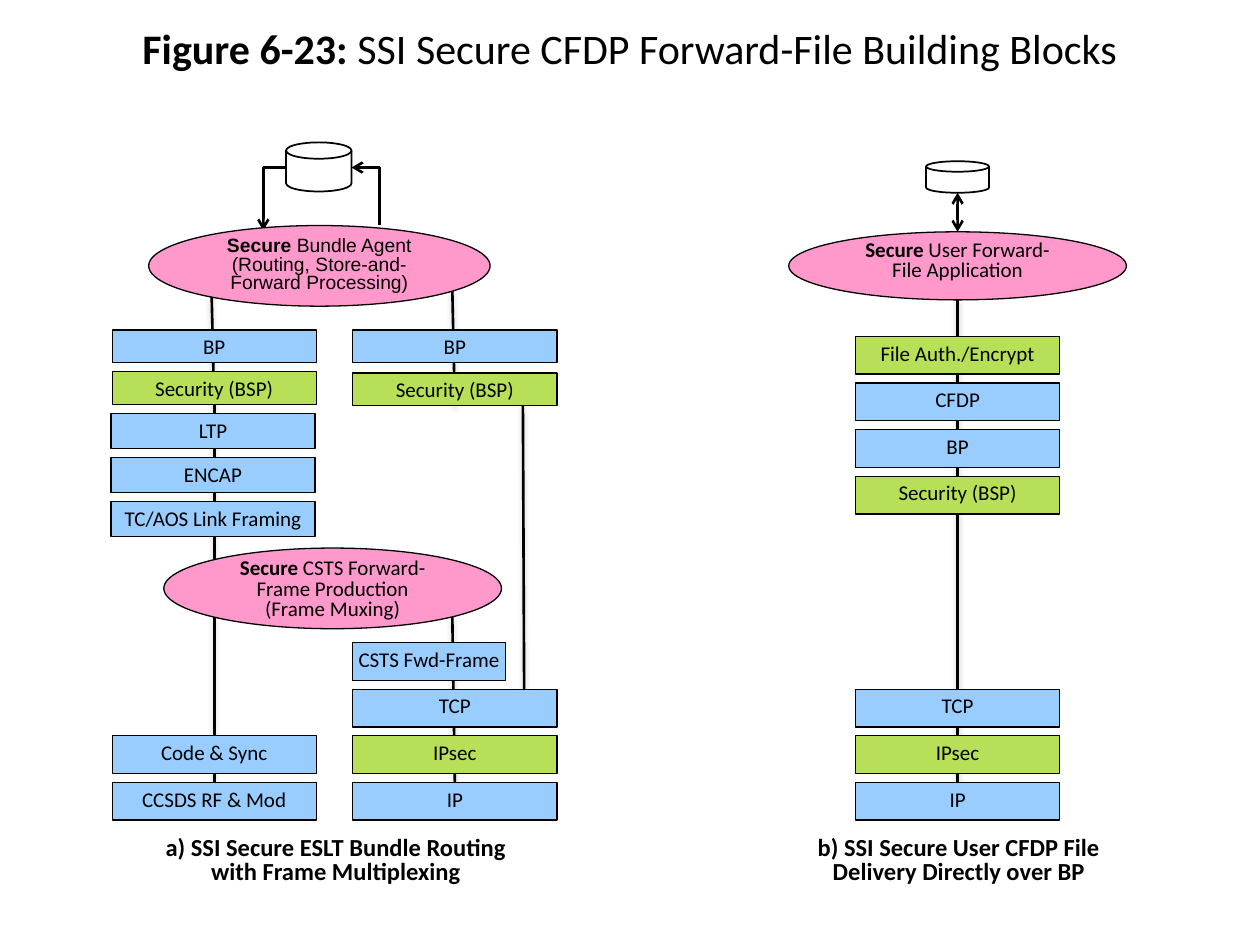
import pptx
import pptx.dml.color
import pptx.enum.shapes
import pptx.enum.text
import pptx.oxml
import pptx.oxml.ns
import pptx.util
from dataclasses import dataclass

Inches = pptx.util.Inches
Kind = pptx.enum.shapes.MSO_SHAPE
Wire = pptx.enum.shapes.MSO_CONNECTOR
Anchor = pptx.enum.text.MSO_ANCHOR
Align = pptx.enum.text.PP_ALIGN


@dataclass(frozen=True)
class Theme:
    black: str = "000000"
    white: str = "FFFFFF"
    blue: str = "99CCFF"
    green: str = "B7E058"
    pink: str = "FF99CC"
    shade: str = "808080"
    face: str = "Calibri"
    title: int = 24
    label: int = 14
    body: int = 12
    edge: float = 0.75
    disk: float = 1
    wire: float = 1.5
    tight: float = 0.8


@dataclass(frozen=True)
class Stack:
    left: float
    top: float
    pitch: float
    tall: float
    names: tuple[str, ...]
    wide: float = 1.62


@dataclass(frozen=True)
class Oval:
    at: tuple[float, float, float, float]
    lines: tuple[str, ...]
    face: str = "Calibri"
    size: int = 12
    anchor: Anchor = Anchor.TOP


THEME = Theme()
SECURE = {"Security (BSP)", "IPsec", "File Auth./Encrypt"}

STACKS = {
    "link": Stack(0.89, 2.62, 0.33, 0.26, ("BP", "Security (BSP)")),
    "frame": Stack(0.88, 3.28, 0.35, 0.28, ("LTP", "ENCAP", "TC/AOS Link Framing")),
    "radio": Stack(0.89, 5.84, 0.37, 0.3, ("Code & Sync", "CCSDS RF & Mod")),
    "bundle": Stack(2.8, 2.62, 0.34, 0.26, ("BP", "Security (BSP)")),
    "csts": Stack(2.8, 5.1, 0.37, 0.3, ("CSTS Fwd-Frame",), 1.21),
    "net": Stack(2.8, 5.47, 0.37, 0.3, ("TCP", "IPsec", "IP")),
    "user": Stack(6.79, 2.67, 0.37, 0.3,
                  ("File Auth./Encrypt", "CFDP", "BP", "Security (BSP)")),
    "base": Stack(6.79, 5.47, 0.37, 0.3, ("TCP", "IPsec", "IP")),
}

AGENT = Oval((1.18, 1.79, 2.71, 0.64),
             (" Bundle Agent", "(Routing, Store-and-Forward Processing)"),
             "Arial", 11, Anchor.MIDDLE)
MUXER = Oval((1.3, 4.35, 2.68, 0.64),
             (" CSTS Forward-Frame Production", "(Frame Muxing)"))
USER = Oval((6.26, 1.84, 2.68, 0.54), (" User Forward-", "File Application"))


def tint(code: str) -> pptx.dml.color.RGBColor:
    return pptx.dml.color.RGBColor.from_string(code)


def style(para, size: int, face: str = THEME.face, space: float | None = None) -> None:
    para.alignment = Align.CENTER
    para.line_spacing = space
    para.font.size = pptx.util.Pt(size)
    para.font.name = face
    para.font.color.rgb = tint(THEME.black)


def pad(frame, side: float, end: float) -> None:
    frame.margin_left = frame.margin_right = Inches(side)
    frame.margin_top = frame.margin_bottom = Inches(end)


def draw_shape(slide, kind, at: tuple, fill: str, edge: float = THEME.edge):
    shape = slide.shapes.add_shape(kind, *map(Inches, at))
    shape.shadow.inherit = False
    shape.fill.solid()
    shape.fill.fore_color.rgb = tint(fill)
    shape.line.color.rgb = tint(THEME.black)
    shape.line.width = pptx.util.Pt(edge)
    return shape


def draw_stack(slide, stack: Stack) -> list:
    boxes = []
    for row, name in enumerate(stack.names):
        at = (stack.left, stack.top + row * stack.pitch, stack.wide, stack.tall)
        fill = THEME.green if name in SECURE else THEME.blue
        box = draw_shape(slide, Kind.RECTANGLE, at, fill)
        frame = box.text_frame
        frame.word_wrap = False
        frame.vertical_anchor = Anchor.TOP
        pad(frame, 0.04, 0.03)
        frame.text = name
        style(frame.paragraphs[0], THEME.body)
        boxes.append(box)
    return boxes


def draw_oval(slide, oval: Oval):
    shape = draw_shape(slide, Kind.OVAL, oval.at, THEME.pink)
    frame = shape.text_frame
    frame.word_wrap = True
    frame.vertical_anchor = oval.anchor
    pad(frame, 0, 0)
    for row, line in enumerate(oval.lines):
        para = frame.add_paragraph() if row else frame.paragraphs[0]
        if row == 0:
            lead = para.add_run()
            lead.text = "Secure"
            lead.font.bold = True
        para.add_run().text = line
        style(para, oval.size, oval.face, THEME.tight)
    return shape


def draw_wire(slide, start: tuple, end: tuple, heads: tuple[str, ...] = (),
              bent: bool = False, shade: bool = True):
    kind = Wire.ELBOW if bent else Wire.STRAIGHT
    wire = slide.shapes.add_connector(kind, *map(Inches, start + end))
    wire.line.color.rgb = tint(THEME.black)
    wire.line.width = pptx.util.Pt(THEME.wire)
    props = wire._element.spPr
    if bent:
        props.find(pptx.oxml.ns.qn("a:prstGeom")).set("prst", "bentConnector2")
    pen = wire.line._get_or_add_ln()
    space = pptx.oxml.ns.nsdecls("a")
    for head in heads:
        pen.append(pptx.oxml.parse_xml(f'<a:{head} {space} type="arrow"/>'))
    glow = (f'<a:outerShdw blurRad="39370" dist="20320" dir="5400000">'
            f'<a:srgbClr val="{THEME.shade}"><a:alpha val="38000"/></a:srgbClr>'
            f'</a:outerShdw>') if shade else ""
    props.append(pptx.oxml.parse_xml(f"<a:effectLst {space}>{glow}</a:effectLst>"))
    slide.shapes._spTree.insert(2, wire._element)
    return wire


def draw_label(slide, at: tuple, text: str) -> None:
    frame = slide.shapes.add_textbox(*map(Inches, at)).text_frame
    frame.word_wrap = False
    frame.text = text
    for para in frame.paragraphs:
        style(para, THEME.label, space=THEME.tight)
        para.font.bold = True


def draw_title(slide) -> None:
    frame = slide.shapes.add_textbox(*map(Inches, (0.5, -0.25, 9, 1.25))).text_frame
    frame.word_wrap = True
    frame.vertical_anchor = Anchor.MIDDLE
    para = frame.paragraphs[0]
    lead = para.add_run()
    lead.text = "Figure 6-23: "
    lead.font.bold = True
    para.add_run().text = "SSI Secure CFDP Forward-File Building Blocks"
    style(para, THEME.title)


def main() -> None:
    deck = pptx.Presentation()
    deck.slide_width, deck.slide_height = Inches(10), Inches(7.5)
    slide = deck.slides.add_slide(deck.slide_layouts[6])
    draw_title(slide)
    boxes = {name: draw_stack(slide, stack) for name, stack in STACKS.items()}
    draw_oval(slide, AGENT)
    draw_oval(slide, MUXER)
    user = draw_oval(slide, USER)
    for at in ((2.27, 1.13, 0.52, 0.39), (7.35, 1.28, 0.5, 0.25)):
        draw_shape(slide, Kind.FLOWCHART_MAGNETIC_DISK, at, THEME.white, THEME.disk)

    for start, end, name in (((1.7, 4.89), (1.7, 6.21), "radio"),
                             ((3.59, 4.89), (3.61, 6.21), "net"),
                             ((7.6, 2.38), (7.6, 6.21), "base")):
        draw_wire(slide, start, end).end_connect(boxes[name][-1], 0)
    for start, end, name in (((1.7, 3.21), (1.7, 4.44), "link"),
                             ((1.7, 3.21), (1.68, 2.35), "link"),
                             ((3.61, 3.22), (3.59, 2.3), "bundle")):
        draw_wire(slide, start, end).begin_connect(boxes[name][-1], 2)
    draw_wire(slide, (4.15, 3.22), (4.16, 5.47))
    draw_wire(slide, (2.79, 1.33), (3.01, 1.79), ("headEnd",), True, False)
    draw_wire(slide, (2.27, 1.33), (2.09, 1.83), ("tailEnd",), True, False)
    both = draw_wire(slide, (7.6, 1.84), (7.6, 1.53), ("headEnd", "tailEnd"), shade=False)
    both.begin_connect(user, 0)

    draw_label(slide, (1.19, 6.6, 2.95, 0.49),
               "a) SSI Secure ESLT Bundle Routing\nwith Frame Multiplexing")
    draw_label(slide, (6.36, 6.6, 2.5, 0.48),
               "b) SSI Secure User CFDP File\vDelivery Directly over BP")
    deck.save("out.pptx")


if __name__ == "__main__":
    main()
